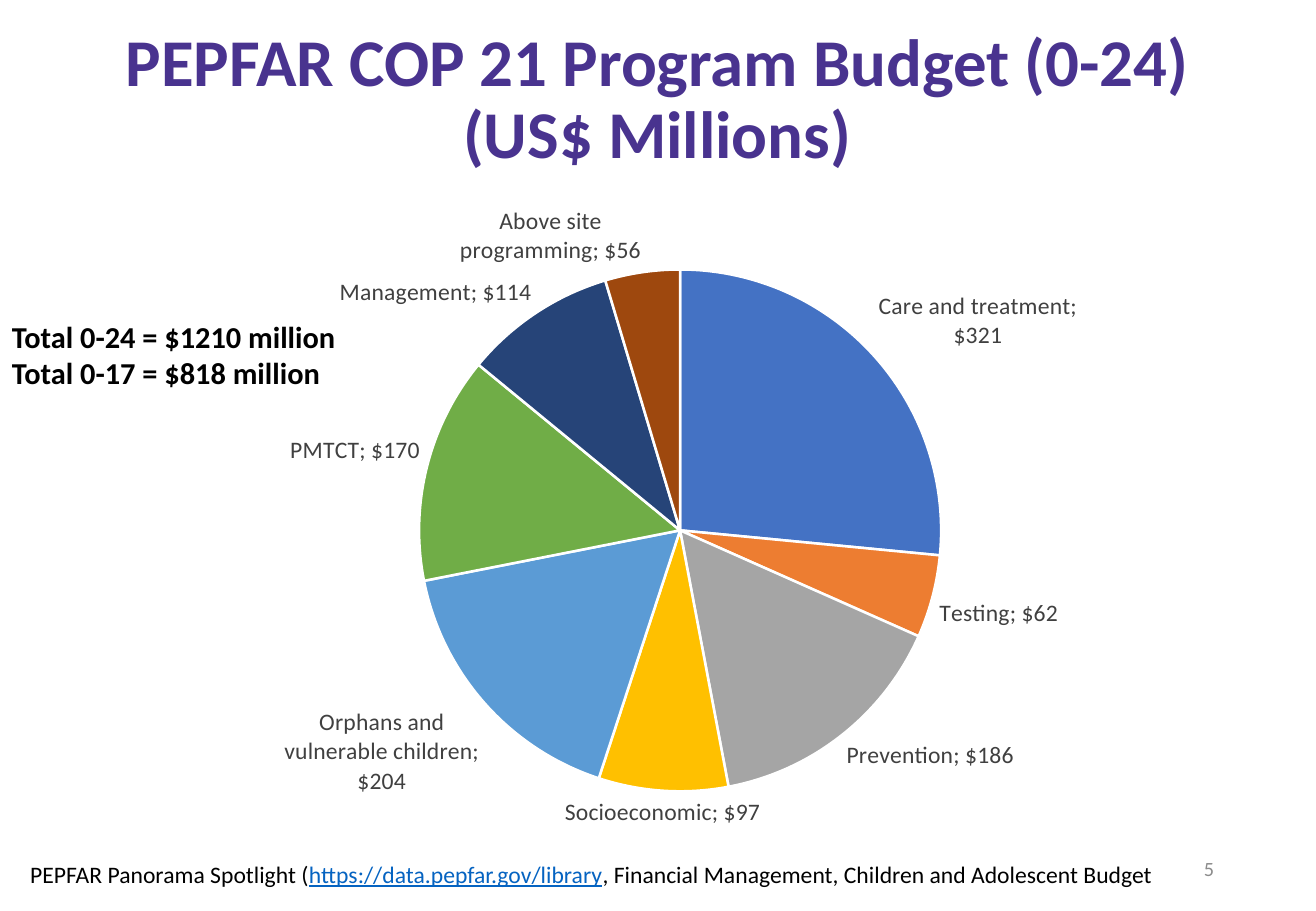
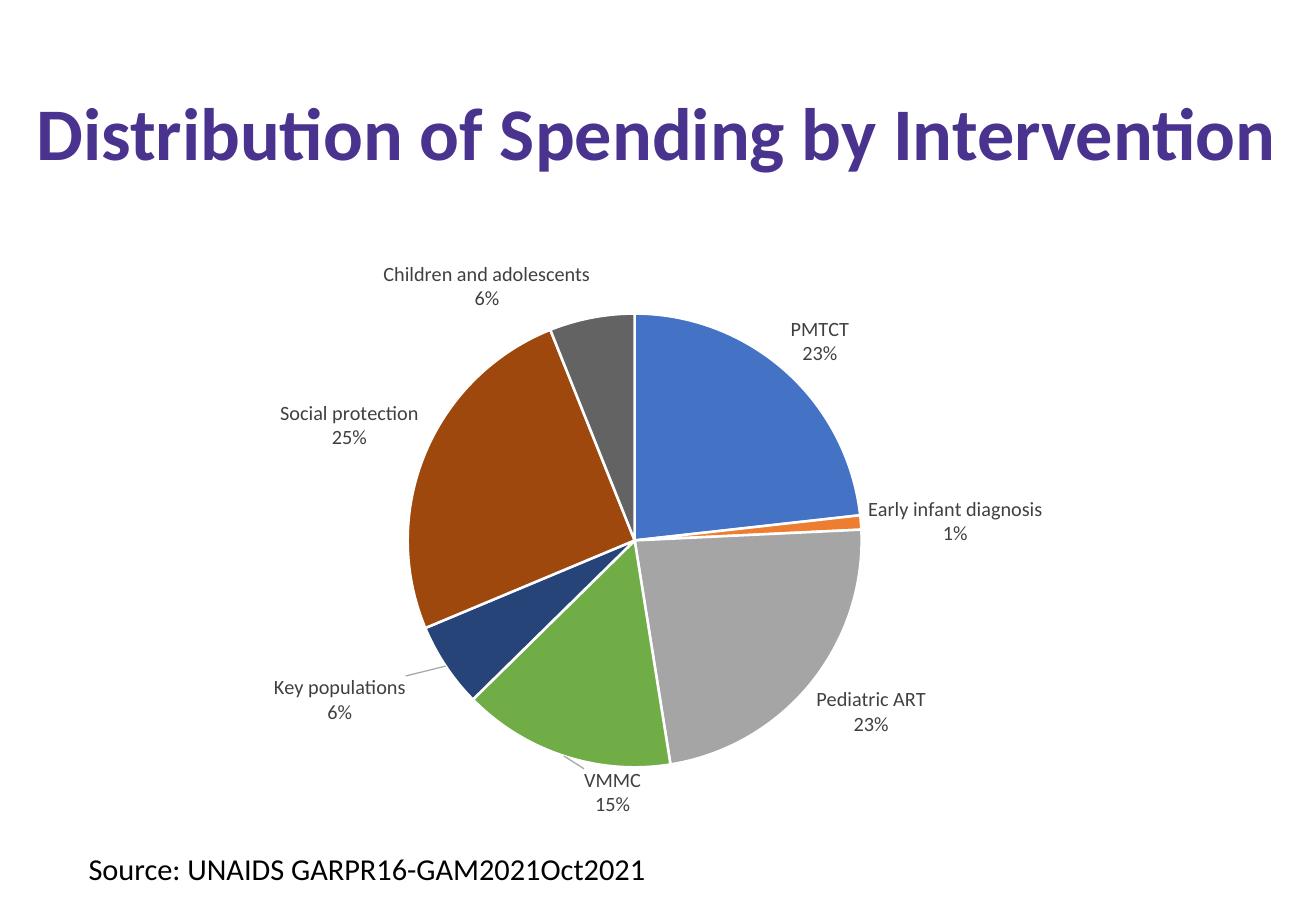
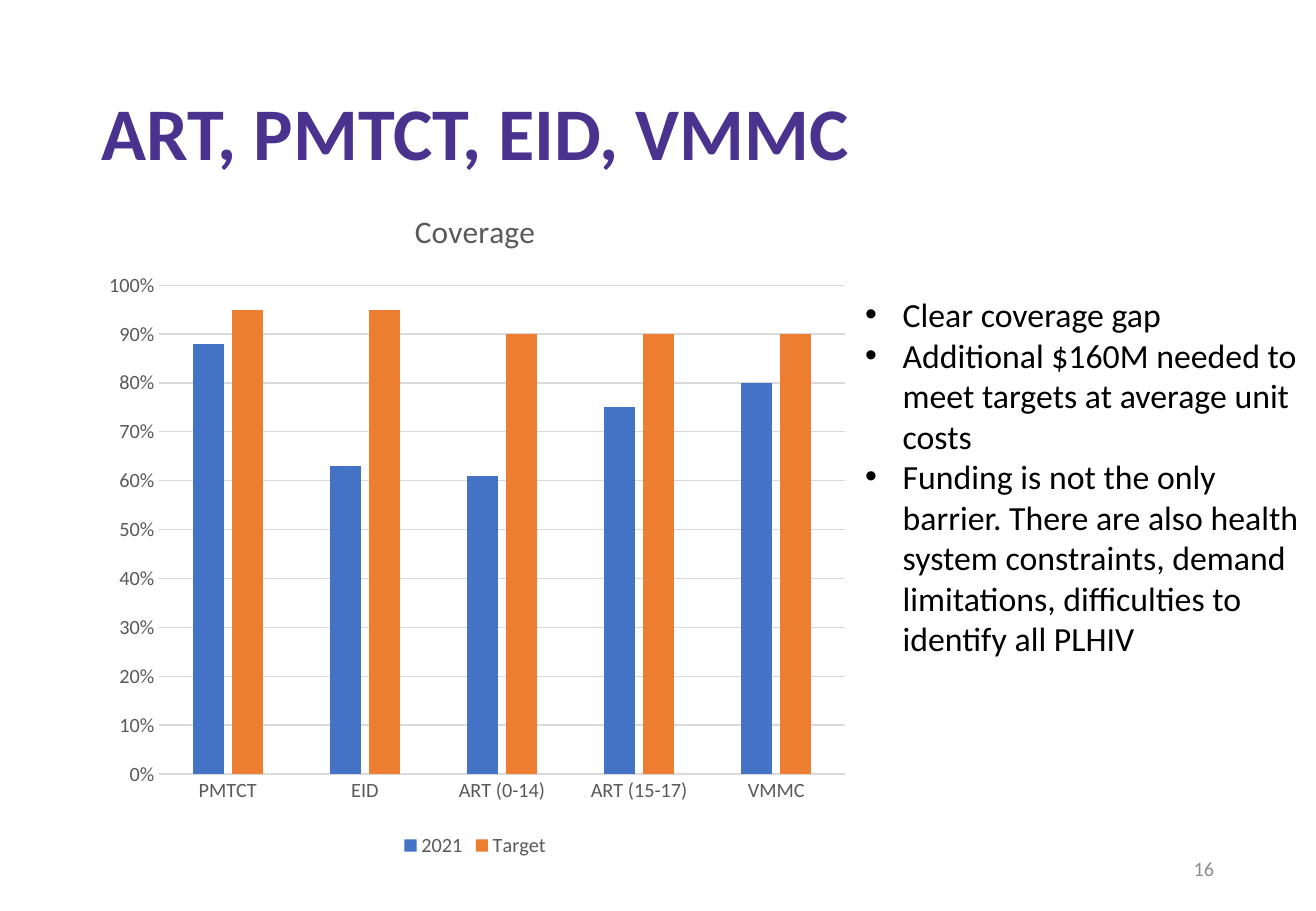
from copy import deepcopy
from dataclasses import dataclass
from typing import Optional

from lxml import etree
from pptx import Presentation
from pptx.chart import data as cdata
from pptx.dml import color
from pptx.enum import chart as ch, text as tx
from pptx.oxml import ns, xmlchemy
from pptx.util import Pt

SCALE = 9144  # EMU per px, 100 px to the inch
FONT = "Calibri"
HEX = {
    "title": "49338F", "text": "000000", "link": "0563C1", "page": "8C8C8C",
    "label": "404040", "axis": "595959", "grid": "D9D9D9", "white": "FFFFFF",
    "lead": "A6A6A6",
    "blue": "4472C4", "orange": "ED7D31", "gray": "A5A5A5", "gold": "FFC000",
    "sky": "5B9BD5", "green": "70AD47", "navy": "264478", "rust": "9E480E",
    "slate": "636363",
}
WEDGES = ["blue", "orange", "gray", "gold", "sky", "green", "navy", "rust", "slate"]


@dataclass(frozen=True)
class Box:
    x: int
    y: int
    w: int
    h: int

    def emu(self) -> tuple[int, ...]:
        return tuple(n * SCALE for n in (self.x, self.y, self.w, self.h))


@dataclass(frozen=True)
class Run:
    words: str
    hue: Optional[str] = None
    line: bool = False


@dataclass(frozen=True)
class Style:
    size: float
    hue: str = "text"
    bold: bool = False
    align: Optional[tx.PP_ALIGN] = None
    mid: bool = False
    lead: Optional[float] = None
    dots: bool = False


@dataclass(frozen=True)
class Pie:
    box: Box
    cats: list[str]
    vals: list[int]
    plot: tuple[float, ...]  # left, top, width, height as shares of the chart
    size: int
    share: bool  # percentages in place of amounts
    moves: dict[int, tuple[float, float]]


HEAD = Style(44, "title", True, mid=True, lead=0.9)
TIGHT = Style(39.6, "title", True, tx.PP_ALIGN.CENTER, True, 0.9)
PAGE = Style(12, "page", align=tx.PP_ALIGN.RIGHT, mid=True)
TOTAL = Style(18, bold=True)
NOTE = Style(14)
SOURCE = Style(18)
LIST = Style(20, dots=True)
FOOT = Box(765, 695, 244, 40)


def rgb(name: str) -> color.RGBColor:
    return color.RGBColor.from_string(HEX[name])


def ink(font, size: float, hue: str) -> None:
    font.name, font.size, font.bold = FONT, Pt(size), False
    font.color.rgb = rgb(hue)


def node(tag: str, **attrs: str) -> etree.ElementBase:
    item = xmlchemy.OxmlElement(tag)
    for key, val in attrs.items():
        item.set(key, val)
    return item


# Text
def write(slide, box: Box, style: Style, *paras: list[Run]) -> None:
    frame = slide.shapes.add_textbox(*box.emu()).text_frame
    frame.word_wrap = True
    if style.mid:
        frame.vertical_anchor = tx.MSO_ANCHOR.MIDDLE
    for i, runs in enumerate(paras):
        para = frame.add_paragraph() if i else frame.paragraphs[0]
        para.alignment, para.line_spacing = style.align, style.lead
        if style.dots:
            props = para._p.get_or_add_pPr()
            props.set("marL", str(31 * SCALE))
            props.set("indent", str(-31 * SCALE))
            props.append(node("a:buFont", typeface="Arial"))
            props.append(node("a:buChar", char="•"))
        for item in runs:
            run = para.add_run()
            run.text = item.words
            ink(run.font, style.size, item.hue or style.hue)
            run.font.bold = style.bold
            run.font.underline = item.line


# Charts
def place(parent, spot: dict[str, float], modes: tuple[str, ...]) -> None:
    """Fill a c:layout element with a manual layout."""
    hand = node("c:manualLayout")
    for tag in modes:
        hand.append(node("c:" + tag, val="inner" if tag == "layoutTarget" else "edge"))
    for tag, val in spot.items():
        hand.append(node("c:" + tag, val=str(val)))
    parent.append(hand)


def fit(chart, plot: tuple[float, ...]) -> None:
    area = chart._chartSpace.chart.plotArea
    old = area.find(ns.qn("c:layout"))
    if old is not None:
        area.remove(old)
    slot = node("c:layout")
    area.insert(0, slot)
    place(slot, dict(zip("xywh", plot)), ("layoutTarget", "xMode", "yMode"))


def label(series, pie: Pie) -> None:
    marks = series.data_labels
    ink(marks.font, pie.size, "label")
    marks.number_format = "0%" if pie.share else '"$"#,##0'
    marks.number_format_is_linked = False
    marks.position = ch.XL_LABEL_POSITION.OUTSIDE_END
    marks.show_category_name = True
    marks.show_value, marks.show_percentage = not pie.share, pie.share
    root = marks._element
    for old in root.findall(ns.qn("c:showLeaderLines")):
        root.remove(old)
    gap = node("c:separator")
    gap.text = "\n" if pie.share else "; "
    root.append(gap)
    shared = list(root)
    # Labels moved away from their slices
    for at, (i, (dx, dy)) in enumerate(sorted(pie.moves.items())):
        one, slot = node("c:dLbl"), node("c:layout")
        place(slot, {"x": dx, "y": dy}, ())
        one.extend([node("c:idx", val=str(i)), slot])
        one.extend([deepcopy(part) for part in shared])
        root.insert(at, one)
    # Leader lines
    root.append(node("c:showLeaderLines", val="1"))
    lines, look = node("c:leaderLines"), node("c:spPr")
    line, fill = node("a:ln", w="9525"), node("a:solidFill")
    fill.append(node("a:srgbClr", val=HEX["lead"]))
    line.append(fill)
    look.append(line)
    lines.append(look)
    root.append(lines)


def chart(slide, kind, box: Box, cats: list[str], rows: dict, plot: tuple[float, ...]):
    data = cdata.CategoryChartData()
    data.categories = cats
    for name, vals in rows.items():
        data.add_series(name, vals)
    made = slide.shapes.add_chart(kind, *box.emu(), data).chart
    ink(made.font, 10, "text")
    made.has_title = made.has_legend = False
    fit(made, plot)
    return made


def draw(slide, pie: Pie) -> None:
    made = chart(slide, ch.XL_CHART_TYPE.PIE, pie.box, pie.cats,
                 {"Series 1": pie.vals}, pie.plot)
    made.plots[0].vary_by_categories = True
    series = made.plots[0].series[0]
    for i, hue in enumerate(WEDGES[:len(pie.vals)]):
        look = series.points[i].format
        look.fill.solid()
        look.fill.fore_color.rgb = rgb(hue)
        look.line.color.rgb = rgb("white")
        look.line.width = Pt(1.5)
    label(series, pie)


def bars(slide, box: Box) -> None:
    made = chart(slide, ch.XL_CHART_TYPE.COLUMN_CLUSTERED, box,
                 ["PMTCT", "EID", "ART (0-14)", "ART (15-17)", "VMMC"],
                 {"2021": [0.88, 0.63, 0.61, 0.75, 0.8],
                  "Target": [0.95, 0.95, 0.9, 0.9, 0.9]},
                 (0.09, 0.15, 0.89, 0.72))
    made.has_title = True
    run = made.chart_title.text_frame.paragraphs[0].add_run()
    run.text = "Coverage"
    ink(run.font, 18.6, "axis")
    made.chart_title.include_in_layout = False
    made.has_legend = True
    made.legend.position = ch.XL_LEGEND_POSITION.BOTTOM
    made.legend.include_in_layout = False
    ink(made.legend.font, 12, "axis")
    # Axes
    across, up = made.category_axis, made.value_axis
    for axis in (across, up):
        axis.major_tick_mark = axis.minor_tick_mark = ch.XL_TICK_MARK.NONE
        ink(axis.tick_labels.font, 12, "axis")
    up.minimum_scale, up.maximum_scale, up.major_unit = 0, 1, 0.1
    up.tick_labels.number_format = "0%"
    up.tick_labels.number_format_is_linked = False
    up.format.line.fill.background()
    up.has_major_gridlines = True
    for line in (across.format.line, up.major_gridlines.format.line):
        line.color.rgb = rgb("grid")
        line.width = Pt(0.75)
    # Columns
    plot = made.plots[0]
    plot.gap_width, plot.overlap, plot.vary_by_categories = 219, -27, False
    for series, hue in zip(plot.series, WEDGES):
        series.format.fill.solid()
        series.format.fill.fore_color.rgb = rgb(hue)


BUDGET = Pie(
    Box(74, 154, 934, 549),
    ["Care and treatment", "Testing", "Prevention", "Socioeconomic",
     "Orphans and vulnerable children", "PMTCT", "Management",
     "Above site programming"],
    [321, 62, 186, 97, 204, 170, 114, 56],
    (0.29, 0.12, 0.46, 0.79), 14, False, {})
SPEND = Pie(
    Box(74, 200, 934, 495),
    ["PMTCT", "Early infant diagnosis", "Pediatric ART", "Cash transfers for AGYW",
     "PrEP for AGYW", "VMMC", "Key populations", "Social protection",
     "Children and adolescents"],
    [23, 1, 23, 0, 0, 15, 6, 25, 6],
    (0.28, 0.11, 0.4, 0.77), 12, True,
    {3: (0.2, 0.01), 4: (0.04, 0.01), 5: (0.07, 0.01), 6: (-0.03, 0.01)})


def main() -> None:
    deck = Presentation()
    deck.slide_width, deck.slide_height = 1083 * SCALE, 750 * SCALE
    first, second, third = (deck.slides.add_slide(deck.slide_layouts[6])
                            for _ in range(3))

    # Program budget
    write(first, Box(74, 40, 934, 86), TIGHT,
          [Run("PEPFAR COP 21 Program Budget (0-24) (US$ Millions)")])
    draw(first, BUDGET)
    write(first, FOOT, PAGE, [Run("5")])
    write(first, Box(0, 257, 561, 71), TOTAL,
          [Run("Total 0-24 = $1210 million")], [Run("Total 0-17 = $818 million")])
    write(first, Box(15, 703, 967, 34), NOTE,
          [Run("PEPFAR Panorama Spotlight ("),
           Run("https://data.pepfar.gov/library", "link", True),
           Run(", Financial Management, Children and Adolescent Budget")])

    # Spending by intervention
    write(second, Box(20, 40, 1045, 145), HEAD,
          [Run("Distribution of Spending by Intervention")])
    draw(second, SPEND)
    write(second, Box(63, 695, 891, 40), SOURCE,
          [Run("Source: UNAIDS GARPR16-GAM2021Oct2021")])

    # Coverage
    write(third, Box(74, 40, 934, 145), HEAD, [Run("ART, PMTCT, EID, VMMC")])
    bars(third, Box(74, 151, 634, 559))
    write(third, FOOT, PAGE, [Run("16")])
    write(third, Box(702, 237, 395, 313), LIST,
          [Run("Clear coverage gap")],
          [Run("Additional $160M needed to meet targets at average unit costs")],
          [Run("Funding is not the only barrier. There are also health system "
               "constraints, demand limitations, difficulties to identify all PLHIV")])

    deck.save("out.pptx")


if __name__ == "__main__":
    main()
